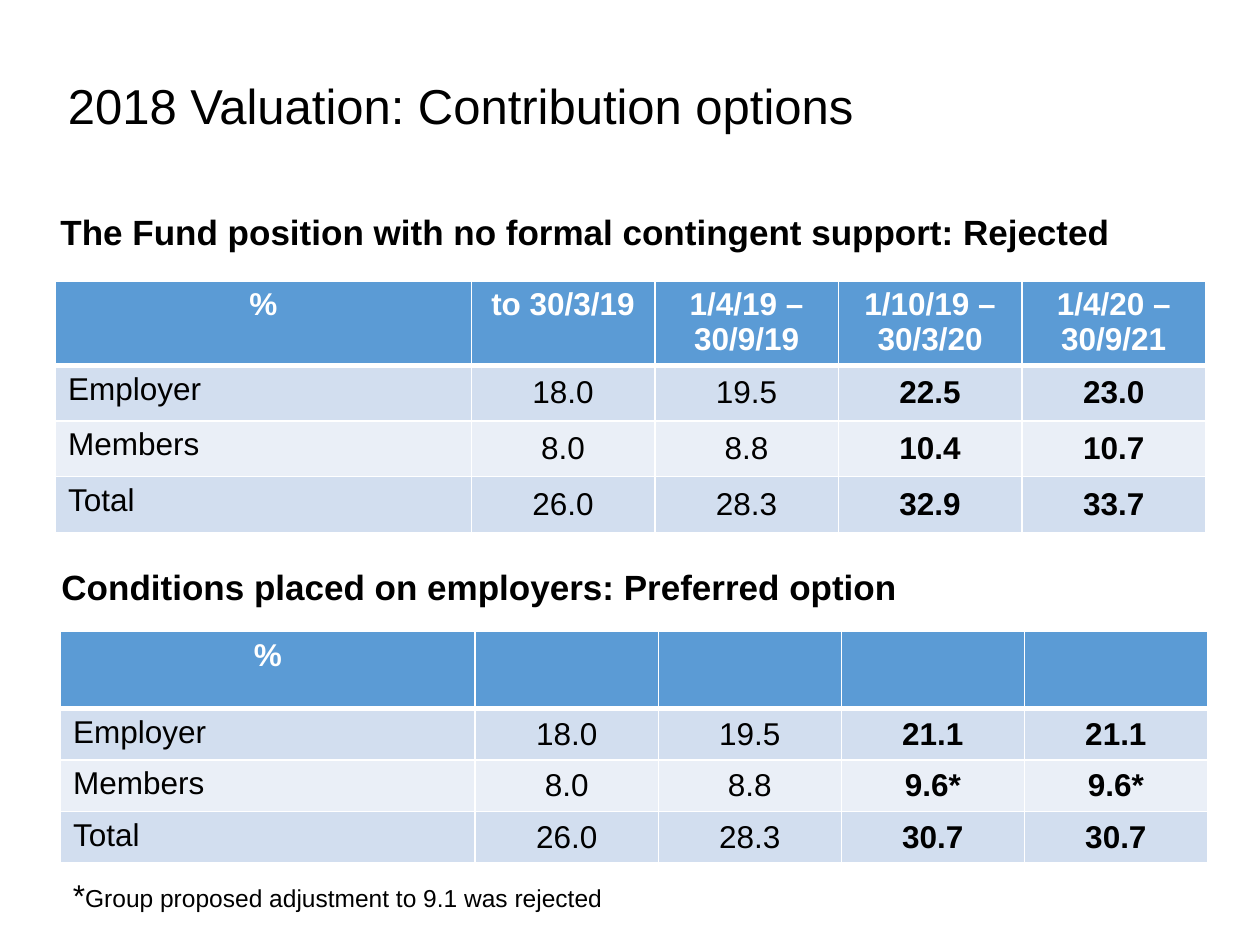
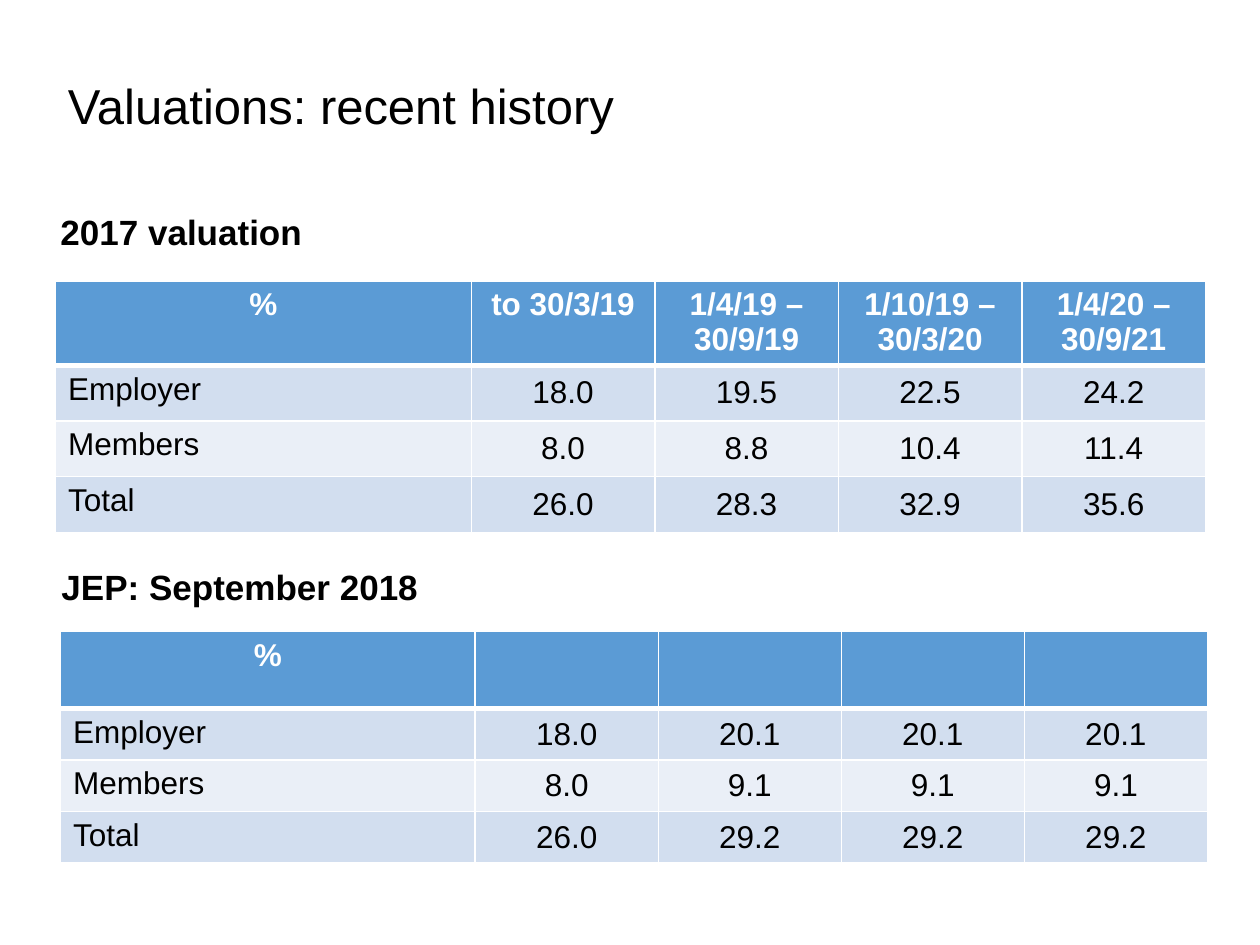
from dataclasses import dataclass

from lxml.etree import SubElement
from pptx import Presentation
from pptx.dml.color import RGBColor
from pptx.enum.text import MSO_ANCHOR, PP_ALIGN
from pptx.oxml.ns import qn
from pptx.slide import Slide
from pptx.table import _Cell
from pptx.text.text import _Paragraph
from pptx.util import Cm, Pt

HUES = {"ink": "000000", "head": "5B9BD5", "odd": "D2DEEF", "even": "EAEFF7", "white": "FFFFFF"}
FACE = "Arial"
NAMES = ["Employer", "Members", "Total"]
DATES = ["%", "to 30/3/19", "1/4/19 – 30/9/19", "1/10/19 – 30/3/20", "1/4/20 – 30/9/21"]
BLANKS = ["%", "", "", "", ""]


@dataclass
class Box:
    left: float
    top: float
    width: float
    height: float
    size: float
    bold: bool = False


@dataclass
class Grid:
    left: float
    top: float
    first: float
    other: float
    rows: list[float]
    heads: list[str]


@dataclass
class Page:
    title: str
    labels: list[str]
    values: list[list[str]]
    bold: bool = False
    note: str = ""


TITLE = Box(1.12, 1.4, 16.8, 2.3, 28)
LABELS = [Box(0.97, 4.11, 23.16, 1.12, 20, True), Box(0.99, 11.28, 23.16, 1.12, 20, True)]
NOTE = Box(1.22, 17.53, 14.88, 1.02, 14)
GRIDS = [
    Grid(1.12, 5.66, 8.38, 3.7, [1.57, 1.12, 1.12, 1.14], DATES),
    Grid(1.22, 12.73, 8.36, 3.69, [1.55, 1.04, 1.04, 1.04], BLANKS),
]
PAGES = [
    Page(
        "2018 Valuation: Contribution options",
        ["The Fund position with no formal contingent support: Rejected",
         "Conditions placed on employers: Preferred option"],
        [["18.0 19.5 22.5 23.0", "8.0 8.8 10.4 10.7", "26.0 28.3 32.9 33.7"],
         ["18.0 19.5 21.1 21.1", "8.0 8.8 9.6* 9.6*", "26.0 28.3 30.7 30.7"]],
        bold=True,
        note="Group proposed adjustment to 9.1 was rejected",
    ),
    Page(
        "Valuations: recent history",
        ["2017 valuation", "JEP: September 2018"],
        [["18.0 19.5 22.5 24.2", "8.0 8.8 10.4 11.4", "26.0 28.3 32.9 35.6"],
         ["18.0 20.1 20.1 20.1", "8.0 9.1 9.1 9.1", "26.0 29.2 29.2 29.2"]],
    ),
]


def style(para: _Paragraph, size: float, hue: str = "ink", bold: bool = False) -> None:
    for run in para.runs:
        run.font.name = FACE
        run.font.size = Pt(size)
        run.font.bold = bold
        run.font.color.rgb = RGBColor.from_string(HUES[hue])


def write(slide: Slide, box: Box, text: str) -> _Paragraph:
    shape = slide.shapes.add_textbox(Cm(box.left), Cm(box.top), Cm(box.width), Cm(box.height))
    frame = shape.text_frame
    frame.word_wrap = True
    frame.text = text
    style(frame.paragraphs[0], box.size, bold=box.bold)
    return frame.paragraphs[0]


def edge(cell: _Cell, row: int) -> None:
    props = cell._tc.get_or_add_tcPr()
    thick = {("lnB", 0), ("lnT", 1)}
    for side in ("lnL", "lnR", "lnT", "lnB"):
        width = Pt(3 if (side, row) in thick else 1)
        line = SubElement(props, qn(f"a:{side}"), w=str(width))
        fill = SubElement(line, qn("a:solidFill"))
        SubElement(fill, qn("a:srgbClr"), val=HUES["white"])


def paint(cell: _Cell, row: int, col: int, text: str, bold: bool) -> None:
    edge(cell, row)
    cell.fill.solid()
    band = "head" if row == 0 else "odd" if row % 2 else "even"
    cell.fill.fore_color.rgb = RGBColor.from_string(HUES[band])
    cell.text = text
    para = cell.text_frame.paragraphs[0]
    if row == 0:
        cell.margin_bottom = Cm(0.05)
    if row == 0 or col > 0:
        para.alignment = PP_ALIGN.CENTER
    if row > 0 and col > 0:
        cell.vertical_anchor = MSO_ANCHOR.MIDDLE
    style(para, 18, "ink" if row else "white", bold or row == 0)


def tabulate(slide: Slide, grid: Grid, values: list[str], bold: bool) -> None:
    lines = [grid.heads] + [[name, *nums.split()] for name, nums in zip(NAMES, values)]
    widths = [grid.first] + [grid.other] * (len(grid.heads) - 1)
    table = slide.shapes.add_table(
        len(lines), len(widths), Cm(grid.left), Cm(grid.top), Cm(sum(widths)), Cm(sum(grid.rows))
    ).table
    for col, width in enumerate(widths):
        table.columns[col].width = Cm(width)
    for row, line in enumerate(lines):
        table.rows[row].height = Cm(grid.rows[row])
        for col, text in enumerate(line):
            paint(table.cell(row, col), row, col, text, bold and col > 2)


def build(slide: Slide, page: Page) -> None:
    write(slide, TITLE, page.title)
    for box, label, grid, values in zip(LABELS, page.labels, GRIDS, page.values):
        write(slide, box, label)
        tabulate(slide, grid, values, page.bold)
    if page.note:
        para = write(slide, NOTE, "*")
        para.add_run().text = page.note
        style(para, NOTE.size)
        para.runs[0].font.size = Pt(18)


def main() -> None:
    deck = Presentation()
    deck.slide_width, deck.slide_height = Cm(25.4), Cm(19.05)
    for page in PAGES:
        build(deck.slides.add_slide(deck.slide_layouts[6]), page)
    deck.save("out.pptx")


if __name__ == "__main__":
    main()
